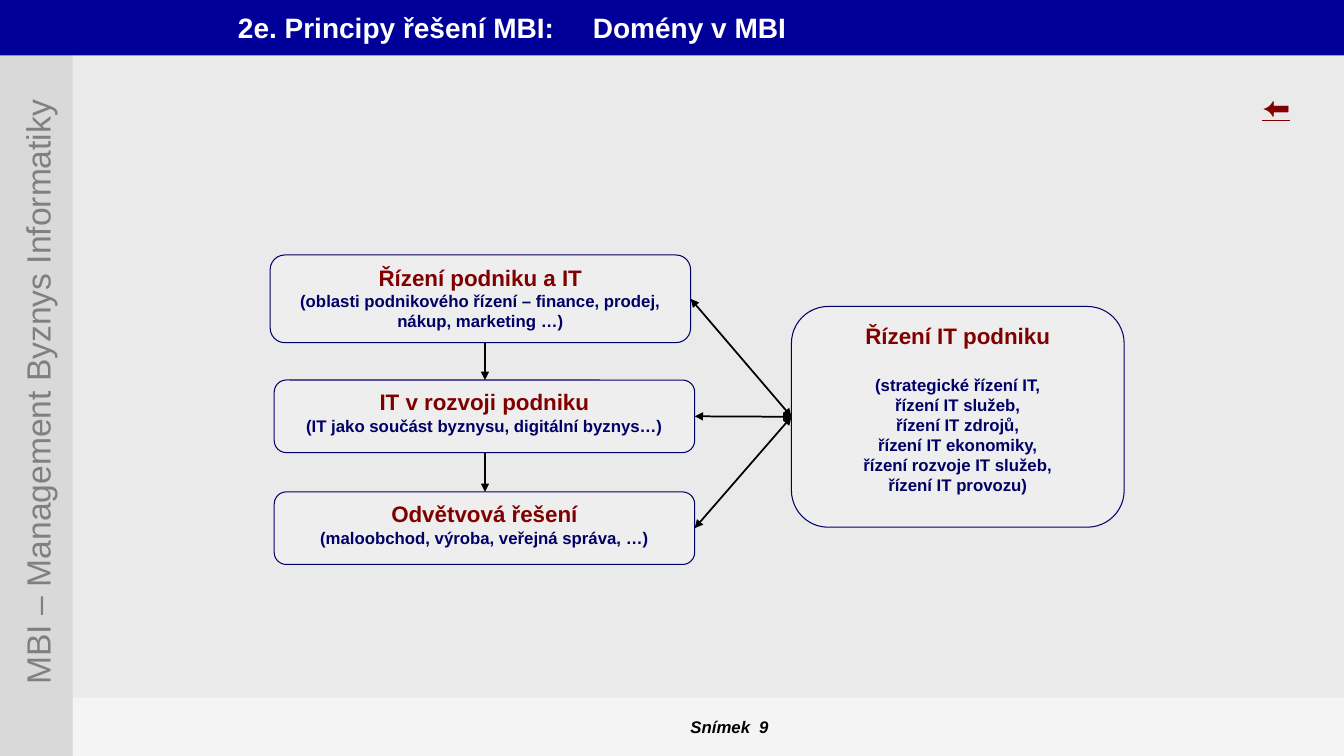
from dataclasses import dataclass

from lxml import etree
from pptx import Presentation
from pptx.dml.color import RGBColor
from pptx.enum.shapes import MSO_CONNECTOR, MSO_SHAPE
from pptx.enum.text import MSO_ANCHOR, MSO_AUTO_SIZE, PP_ALIGN
from pptx.oxml.ns import qn
from pptx.util import Inches, Pt

RECT, ROUNDED = MSO_SHAPE.RECTANGLE, MSO_SHAPE.ROUNDED_RECTANGLE
STRAIGHT = MSO_CONNECTOR.STRAIGHT
LEFT, CENTER = PP_ALIGN.LEFT, PP_ALIGN.CENTER
TOP, MIDDLE = MSO_ANCHOR.TOP, MSO_ANCHOR.MIDDLE
NO_AUTOFIT = MSO_AUTO_SIZE.NONE
LEFT_SITE, RIGHT_SITE = 1, 3  # connection sites of a rounded rectangle


@dataclass(frozen=True)
class Theme:
    font: str = "Arial"
    background: str = "EAEAEA"
    header: str = "000099"
    sidebar: str = "D9D9D9"
    sidebar_text: str = "808080"
    white: str = "FFFFFF"
    black: str = "000000"
    box: str = "F2F2F2"
    navy: str = "000066"
    maroon: str = "800000"
    sidebar_size: int = 24
    title_size: int = 20
    heading_size: int = 16
    body_size: int = 12


THEME = Theme()


def color(value):
    return RGBColor.from_string(value)


def style(paragraph, size, ink, align=LEFT, bold=True):
    paragraph.alignment = align
    font = paragraph.font
    font.name, font.size, font.bold = THEME.font, Pt(size), bold
    font.color.rgb = color(ink)
    return font


def add_tab(paragraph, position):
    tabs = etree.SubElement(paragraph._p.get_or_add_pPr(), qn("a:tabLst"))
    etree.SubElement(tabs, qn("a:tab"), pos=str(Inches(position)), algn="l")


def add_panel(slide, kind, box, fill, alpha=None, outline=None):
    panel = slide.shapes.add_shape(kind, *map(Inches, box))
    panel.shadow.inherit = False
    panel.fill.solid()
    panel.fill.fore_color.rgb = color(fill)
    if alpha:
        srgb = panel.fill._xPr.find(".//" + qn("a:srgbClr"))
        etree.SubElement(srgb, qn("a:alpha"), val=str(alpha * 1000))
    if outline:
        panel.line.color.rgb = color(outline)
        panel.line.width = Pt(0.75)
    else:
        panel.line.fill.background()
    return panel


def add_label(slide, box, text, wrap=False, anchor=TOP):
    label = slide.shapes.add_textbox(*map(Inches, box))
    frame = label.text_frame
    frame.word_wrap, frame.vertical_anchor = wrap, anchor
    frame.text = text
    return label, frame.paragraphs[0]


def add_footer(slide, box):
    left, top, _, _ = box
    add_panel(slide, RECT, box, THEME.white, alpha=50)
    _, number = add_label(slide, (left + 6.03, top + 0.14, 1.1, 0.3),
                          "Snímek\t9", wrap=True, anchor=MIDDLE)
    add_tab(number, 0.68)
    style(number, THEME.body_size, THEME.black).italic = True


def add_sidebar(slide, box):
    left, top, width, _ = box
    add_panel(slide, RECT, box, THEME.sidebar)
    length, thickness = 6.06, 0.5
    label, name = add_label(
        slide, (left + width / 2 - length / 2 + 0.01, top + 3.64, length, thickness),
        "MBI – Management Byznys Informatiky")
    label.rotation = 270
    style(name, THEME.sidebar_size, THEME.sidebar_text, CENTER, bold=False)


def add_header(slide, box):
    left, top, width, _ = box
    add_panel(slide, RECT, box, THEME.header)
    title = slide.shapes.title
    title.left, title.top = Inches(left + 2.26), Inches(top + 0.05)
    title.width, title.height = Inches(width - 2.38), Inches(0.67)
    frame = title.text_frame
    frame.text = "2e. Principy řešení MBI:\tDomény v MBI"
    frame.vertical_anchor, frame.auto_size = TOP, NO_AUTOFIT
    heading = frame.paragraphs[0]
    add_tab(heading, 3.52)
    style(heading, THEME.title_size, THEME.white)
    # The title stands in front of the header bar
    title.element.getparent().append(title.element)


def add_back_arrow(slide, box):
    _, arrow = add_label(slide, box, "⬅")
    style(arrow, THEME.title_size, THEME.maroon).underline = True


def add_domain(slide, box, heading, details, gap=0):
    domain = add_panel(slide, ROUNDED, box, THEME.box, alpha=50, outline=THEME.navy)
    frame = domain.text_frame
    frame.word_wrap, frame.vertical_anchor = True, TOP
    frame.text = "\n".join([heading, *details])
    first, *rest = frame.paragraphs
    style(first, THEME.heading_size, THEME.maroon, CENTER)
    for detail in rest:
        style(detail, THEME.body_size, THEME.navy, CENTER)
    if gap:
        rest[0].space_before = Pt(gap)
    return domain


def add_arrow(slide, start=(0, 0), end=(0, 0), both_ends=False):
    arrow = slide.shapes.add_connector(STRAIGHT, *start, *end)
    arrow.line.color.rgb = color(THEME.black)
    arrow.line.width = Pt(1.25)
    line = arrow.line._get_or_add_ln()
    for end_tag in ("a:headEnd", "a:tailEnd") if both_ends else ("a:tailEnd",):
        etree.SubElement(line, qn(end_tag), type="triangle")
    etree.SubElement(arrow.element.spPr, qn("a:effectLst"))
    return arrow


def add_domain_map(slide, box):
    left, top, _, _ = box
    width = 4.17
    business = [
        add_domain(slide, (left + x, top + y, width, height), heading, [detail])
        for x, y, height, heading, detail in (
            (0, 0, 0.87, "Řízení podniku a IT",
             "(oblasti podnikového řízení – finance, prodej, nákup, marketing …)"),
            (0.04, 1.24, 0.72, "IT v rozvoji podniku",
             "(IT jako součást byznysu, digitální byznys…)"),
            (0.04, 2.35, 0.72, "Odvětvová řešení",
             "(maloobchod, výroba, veřejná správa, …)"),
        )
    ]
    it_management = add_domain(
        slide, (left + 5.17, top + 0.51, 3.3, 2.19), "Řízení IT podniku",
        ["(strategické řízení IT,", "řízení IT služeb,", "řízení IT zdrojů,",
         "řízení IT ekonomiky,", "řízení rozvoje IT služeb,", "řízení IT provozu)"],
        gap=18)

    # Downward arrows between the business domains
    middle = Inches(left + 2.13)
    for upper, lower in zip(business, business[1:]):
        add_arrow(slide, (middle, upper.top + upper.height), (middle, lower.top))

    # Two-way arrows to IT management
    for domain in business:
        arrow = add_arrow(slide, both_ends=True)
        arrow.begin_connect(domain, RIGHT_SITE)
        arrow.end_connect(it_management, LEFT_SITE)


def main():
    prs = Presentation()
    prs.slide_width, prs.slide_height = Inches(13.33), Inches(7.5)
    slide = prs.slides.add_slide(prs.slide_layouts.get_by_name("Title Only"))
    slide.background.fill.solid()
    slide.background.fill.fore_color.rgb = color(THEME.background)

    add_footer(slide, (0.72, 6.92, 12.61, 0.58))
    add_sidebar(slide, (0, 0, 0.72, 7.5))
    add_header(slide, (0, 0, 13.33, 0.55))
    add_back_arrow(slide, (12.42, 0.84, 0.58, 0.44))
    add_domain_map(slide, (2.68, 2.53, 8.47, 3.07))
    prs.save("out.pptx")


if __name__ == "__main__":
    main()
